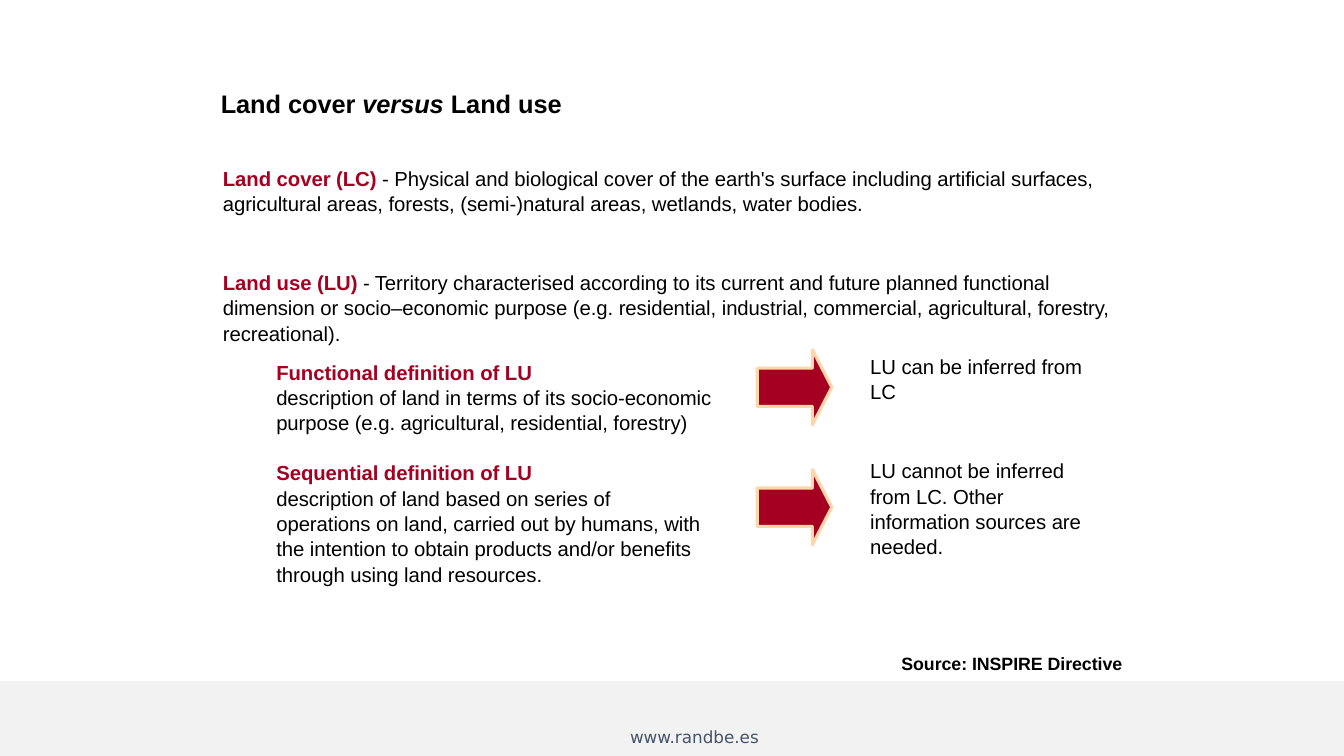
from dataclasses import dataclass

from pptx import Presentation
from pptx.dml.color import RGBColor
from pptx.enum.shapes import MSO_SHAPE
from pptx.enum.text import MSO_ANCHOR
from pptx.slide import Slide
from pptx.util import Inches, Pt

RECTANGLE = MSO_SHAPE.RECTANGLE
RIGHT_ARROW = MSO_SHAPE.RIGHT_ARROW
TOP = MSO_ANCHOR.TOP
MIDDLE = MSO_ANCHOR.MIDDLE
SLIDE_WIDTH = Inches(13.33)
SLIDE_HEIGHT = Inches(7.5)


@dataclass(frozen=True)
class Theme:
    black: RGBColor = RGBColor(0x00, 0x00, 0x00)
    crimson: RGBColor = RGBColor(0xA5, 0x00, 0x21)
    peach: RGBColor = RGBColor(0xFD, 0xD7, 0xA9)
    band: RGBColor = RGBColor(0xF2, 0xF2, 0xF2)
    slate: RGBColor = RGBColor(0x44, 0x54, 0x6A)
    font: str = "Arial"
    footer_font: str = "DejaVu Sans"
    title_size: float = 18.1
    body_size: float = 14.5
    source_size: float = 12.7
    footer_size: float = 12
    body_spacing: float = 1.04
    tracking: int = -5


THEME = Theme()


@dataclass(frozen=True)
class Area:
    left: float
    top: float
    width: float
    height: float

    def box(self) -> tuple[int, int, int, int]:
        return (
            round(SLIDE_WIDTH * self.left / 100),
            round(SLIDE_HEIGHT * self.top / 100),
            round(SLIDE_WIDTH * self.width / 100),
            round(SLIDE_HEIGHT * self.height / 100),
        )


@dataclass(frozen=True)
class Phrase:
    text: str
    color: RGBColor = THEME.black
    bold: bool = False
    italic: bool = False


@dataclass(frozen=True)
class TextBlock:
    area: Area
    paragraphs: list[list[Phrase]]
    size: float = THEME.body_size
    font: str = THEME.font
    line_spacing: float = 1.0
    gap: float = 0
    inset: float = 0
    anchor: MSO_ANCHOR = TOP


@dataclass(frozen=True)
class UseCase:
    heading: str
    description: str
    conclusion: str
    top: float
    width: float
    height: float
    conclusion_top: float
    conclusion_height: float
    arrow_top: float


def term(text: str) -> Phrase:
    return Phrase(text, THEME.crimson, bold=True)


USE_CASES = [
    UseCase(
        "Functional definition of LU",
        "description of land in terms of its socio-economic purpose "
        "(e.g. agricultural, residential, forestry)",
        "LU can be inferred from LC",
        47.47, 32.86, 9.73, 46.67, 6.53, 46.27,
    ),
    UseCase(
        "Sequential definition of LU",
        "description of land based on series of operations on land, "
        "carried out by humans, with the intention to obtain products "
        "and/or benefits through using land resources.",
        "LU cannot be inferred from LC. Other information sources are needed.",
        60.8, 31.96, 16.27, 60.53, 13.07, 62.13,
    ),
]

TEXT_BLOCKS = [
    TextBlock(
        Area(46.14, 95.47, 12.9, 4),
        [[Phrase("www.randbe.es", THEME.slate)]],
        size=THEME.footer_size, font=THEME.footer_font, inset=0.1,
    ),
    TextBlock(
        Area(16.43, 11.6, 78.32, 4.13),
        [[
            Phrase("Land cover ", bold=True),
            Phrase("versus ", bold=True, italic=True),
            Phrase("Land use", bold=True),
        ]],
        size=THEME.title_size, anchor=MIDDLE,
    ),
    TextBlock(
        Area(16.58, 21.87, 66.77, 23.33),
        [
            [
                term("Land cover (LC) "),
                Phrase(
                    "- Physical and biological cover of the earth's surface "
                    "including artificial surfaces, agricultural areas, forests, "
                    "(semi-)natural areas, wetlands, water bodies."
                ),
            ],
            [
                term("Land use (LU) "),
                Phrase(
                    "- Territory characterised according to its current and future "
                    "planned functional dimension or socio–economic purpose "
                    "(e.g. residential, industrial, commercial, agricultural, "
                    "forestry, recreational)."
                ),
            ],
        ],
        line_spacing=THEME.body_spacing, gap=38,
    ),
    TextBlock(
        Area(67.07, 86.4, 16.73, 2.8),
        [[Phrase("Source: INSPIRE Directive", bold=True)]],
        size=THEME.source_size,
    ),
]


def add_band(slide: Slide) -> None:
    shape = slide.shapes.add_shape(RECTANGLE, *Area(0, 90.13, 100, 9.87).box())
    shape.shadow.inherit = False
    shape.fill.solid()
    shape.fill.fore_color.rgb = THEME.band
    shape.line.color.rgb = THEME.band
    shape.line.width = Pt(1)


def add_text(slide: Slide, block: TextBlock) -> None:
    text_frame = slide.shapes.add_textbox(*block.area.box()).text_frame
    text_frame.word_wrap = True
    text_frame.vertical_anchor = block.anchor
    text_frame.margin_left = text_frame.margin_right = Inches(block.inset)
    text_frame.margin_top = text_frame.margin_bottom = Inches(block.inset / 2)
    for index, phrases in enumerate(block.paragraphs):
        paragraph = text_frame.add_paragraph() if index else text_frame.paragraphs[0]
        paragraph.line_spacing = block.line_spacing
        if index:
            paragraph.space_before = Pt(block.gap)
        for phrase in phrases:
            run = paragraph.add_run()
            run.text = phrase.text
            run.font.name = block.font
            run.font.size = Pt(block.size)
            run.font.bold = phrase.bold
            run.font.italic = phrase.italic
            run.font.color.rgb = phrase.color
            if block.font == THEME.font:
                run.font._element.set("spc", str(THEME.tracking))


def add_arrow(slide: Slide, top: float) -> None:
    shape = slide.shapes.add_shape(RIGHT_ARROW, *Area(56.34, top, 5.55, 9.93).box())
    shape.shadow.inherit = False
    shape.adjustments[0] = 0.51
    shape.adjustments[1] = 0.26
    shape.fill.solid()
    shape.fill.fore_color.rgb = THEME.crimson
    shape.line.color.rgb = THEME.peach
    shape.line.width = Pt(2.25)


def add_use_case(slide: Slide, case: UseCase) -> None:
    add_text(slide, TextBlock(
        Area(20.56, case.top, case.width, case.height),
        [[term(case.heading)], [Phrase(case.description)]],
        line_spacing=THEME.body_spacing,
    ))
    add_arrow(slide, case.arrow_top)
    add_text(slide, TextBlock(
        Area(64.74, case.conclusion_top, 16.1, case.conclusion_height),
        [[Phrase(case.conclusion)]],
        line_spacing=THEME.body_spacing,
    ))


def main() -> None:
    presentation = Presentation()
    presentation.slide_width = SLIDE_WIDTH
    presentation.slide_height = SLIDE_HEIGHT
    slide = presentation.slides.add_slide(presentation.slide_layouts[6])
    add_band(slide)
    for block in TEXT_BLOCKS:
        add_text(slide, block)
    for case in USE_CASES:
        add_use_case(slide, case)
    presentation.save("out.pptx")


if __name__ == "__main__":
    main()
